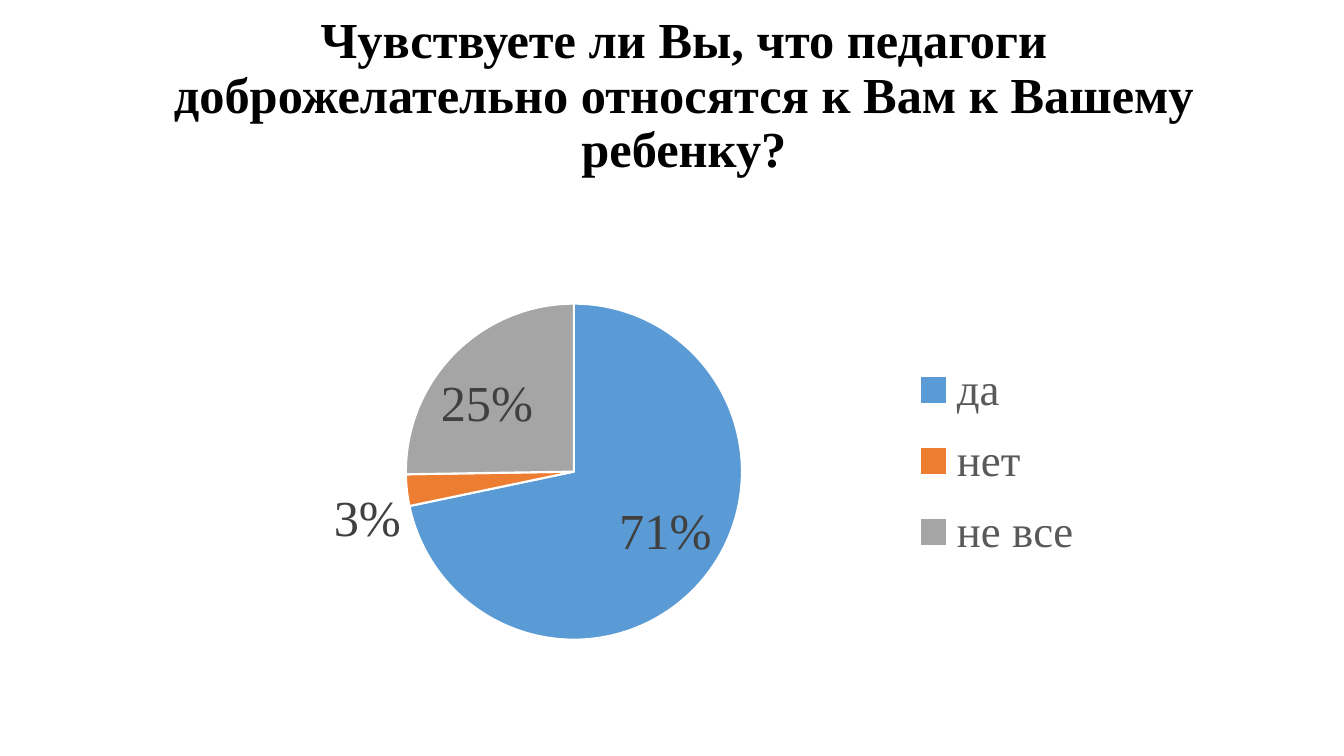
"""Build a survey slide with a title and a pie chart of the answers."""
from lxml import etree
from pptx import Presentation
from pptx import util as u
from pptx.chart.data import CategoryChartData
from pptx.dml.color import RGBColor
from pptx.enum import chart as kinds, text
from pptx.oxml.ns import qn

BLACK = RGBColor(0x00, 0x00, 0x00)
WHITE = RGBColor(0xFF, 0xFF, 0xFF)
DARK = RGBColor(0x40, 0x40, 0x40)
GRAY = RGBColor(0x59, 0x59, 0x59)
BLUE = RGBColor(0x5B, 0x9B, 0xD5)
ORANGE = RGBColor(0xED, 0x7D, 0x31)
SILVER = RGBColor(0xA5, 0xA5, 0xA5)

TITLE = "Чувствуете ли Вы, что педагоги доброжелательно относятся к Вам к Вашему ребенку?"
ANSWERS = [("да", 71, BLUE), ("нет", 3, ORANGE), ("не все", 25, SILVER)]
FACE = "Times New Roman"
PAGE = (1344, 756)
HEAD = (129, 61, 1110, 146)
CHART = (93, 254, 1159, 427)
PIE = (404, 301, 341, 341)
KEY = (902, 343, 180, 235)
PX = u.Inches(1) / 100.8


def px(*nums):
    return [u.Emu(round(n * PX)) for n in nums]


def style(font, size, color, bold=False):
    font.name, font.size, font.bold = FACE, u.Pt(size), bold
    font.color.rgb = color


def layout(box, inner=False):
    left, top, wide, high = CHART
    parts = {"x": (box[0] - left) / wide, "y": (box[1] - top) / high,
             "w": box[2] / wide, "h": box[3] / high}
    root = etree.Element(qn("c:layout"))
    node = etree.SubElement(root, qn("c:manualLayout"))
    if inner:
        etree.SubElement(node, qn("c:layoutTarget")).set("val", "inner")
    for axis in "xy":
        etree.SubElement(node, qn(f"c:{axis}Mode")).set("val", "edge")
    for name, value in parts.items():
        etree.SubElement(node, qn(f"c:{name}")).set("val", f"{value:.2f}")
    return root


def add_title(slide):
    title = slide.shapes.title
    title.left, title.top, title.width, title.height = px(*HEAD)
    frame = title.text_frame
    frame.word_wrap = True
    frame.auto_size = text.MSO_AUTO_SIZE.NONE
    frame.vertical_anchor = text.MSO_ANCHOR.MIDDLE
    para = frame.paragraphs[0]
    para.alignment = text.PP_ALIGN.CENTER
    para.line_spacing = 0.9
    run = para.add_run()
    run.text = TITLE
    style(run.font, 36, BLACK, True)
    para.add_line_break()


def add_pie(slide):
    data = CategoryChartData()
    data.categories = [name for name, _, _ in ANSWERS]
    data.add_series("Series 1", [share for _, share, _ in ANSWERS])
    chart = slide.shapes.add_chart(kinds.XL_CHART_TYPE.PIE, *px(*CHART), data).chart
    chart.has_title = False
    chart.font.name, chart.font.size = "Calibri", u.Pt(10)
    chart.has_legend = True
    key = chart.legend
    key.position = kinds.XL_LEGEND_POSITION.RIGHT
    key.include_in_layout = False
    style(key.font, 32, GRAY)
    plot = chart.plots[0]
    plot.vary_by_categories = True
    for i, (_, _, color) in enumerate(ANSWERS):
        mark = plot.series[0].points[i].format
        mark.fill.solid()
        mark.fill.fore_color.rgb = color
        mark.line.color.rgb = WHITE
        mark.line.width = u.Pt(1.5)
    tags = plot.series[0].data_labels
    tags.show_value = True
    tags.number_format, tags.number_format_is_linked = '0"%"', False
    tags.position = kinds.XL_LABEL_POSITION.BEST_FIT
    style(tags.font, 36, DARK)
    area = chart._chartSpace.chart.plotArea
    for old in area.findall(qn("c:layout")):
        area.remove(old)
    area.insert(0, layout(PIE, True))
    node = key._element
    for old in node.findall(qn("c:layout")):
        node.remove(old)
    node.find(qn("c:legendPos")).addnext(layout(KEY))


def main():
    deck = Presentation()
    deck.slide_width, deck.slide_height = px(*PAGE)
    slide = deck.slides.add_slide(deck.slide_layouts[5])
    add_title(slide)
    add_pie(slide)
    deck.save("out.pptx")


if __name__ == "__main__":
    main()
